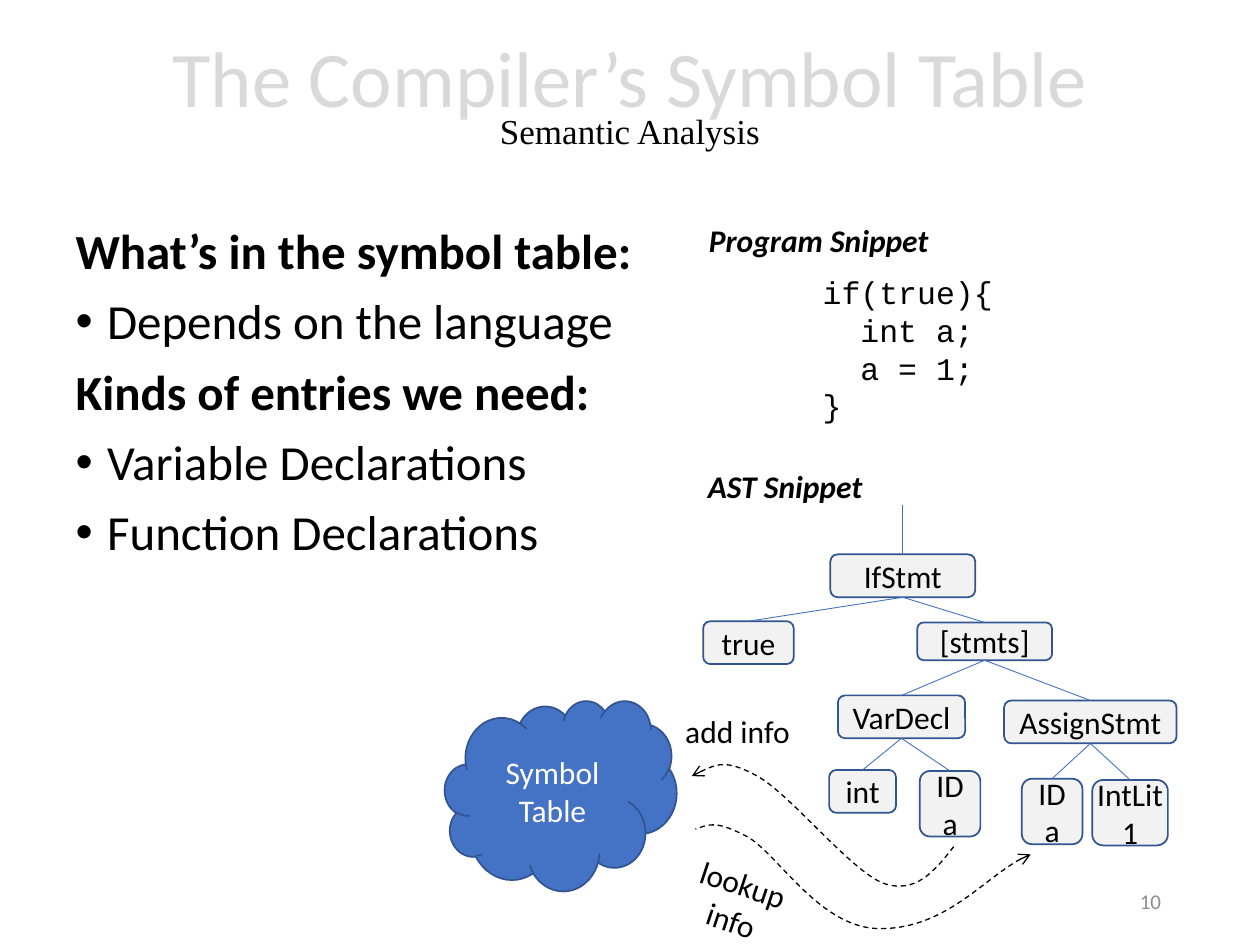
import pptx
import pptx.util
import pptx.dml.color
import pptx.enum.dml
import pptx.enum.shapes
import pptx.enum.text
import pptx.oxml.ns
from lxml import etree

Pt = pptx.util.Pt
qn = pptx.oxml.ns.qn
SHAPE = pptx.enum.shapes.MSO_SHAPE
ALIGN = pptx.enum.text.PP_ALIGN
ANCHOR = pptx.enum.text.MSO_ANCHOR


class Theme:
    sans, serif, mono = "Calibri", "Times New Roman", "Courier New"
    black, white, grey, pale = "000000", "FFFFFF", "8C8C8C", "D9D9D9"
    node, accent, border = "F2F2F2", "4472C4", "325491"
    title, body, subtitle, label, small = 45, 28, 20, 18, 12


def rgb(value):
    return pptx.dml.color.RGBColor.from_string(value)


def style_run(r, size=Theme.label, color=Theme.black, font=Theme.sans, bold=False, italic=False):
    r.font.size, r.font.name = Pt(size), font
    r.font.bold, r.font.italic = bold, italic
    r.font.color.rgb = rgb(color)


def style_text(tf, align=ALIGN.LEFT, **style):
    for p in tf.paragraphs:
        p.alignment = align
        for r in p.runs:
            style_run(r, **style)


def place(sp, x, y, w, h):
    sp.left, sp.top, sp.width, sp.height = Pt(x), Pt(y), Pt(w), Pt(h)


def add_label(s, text, box, wrap=False, align=ALIGN.LEFT, **style):
    sp = s.shapes.add_textbox(*map(Pt, box))
    sp.text_frame.text = text
    sp.text_frame.word_wrap = wrap
    style_text(sp.text_frame, align, **style)
    return sp


def add_block(s, kind, text, box, fill, color):
    sp = s.shapes.add_shape(kind, *map(Pt, box))
    sp.shadow.inherit = False
    sp.fill.solid()
    sp.fill.fore_color.rgb = rgb(fill)
    sp.line.color.rgb, sp.line.width = rgb(Theme.border), Pt(1)
    tf = sp.text_frame
    tf.text, tf.vertical_anchor = text, ANCHOR.MIDDLE
    style_text(tf, ALIGN.CENTER, color=color)
    return sp


def add_title(s, box):
    sp = s.shapes.title
    place(sp, *box)
    tf = sp.text_frame
    tf.text = "The Compiler’s Symbol Table\vSemantic Analysis"
    tf.vertical_anchor = ANCHOR.MIDDLE
    tf.auto_size = pptx.enum.text.MSO_AUTO_SIZE.NONE
    p = tf.paragraphs[0]
    p.alignment, p.line_spacing = ALIGN.CENTER, 0.7
    style_run(p.runs[0], Theme.title, Theme.pale)
    style_run(p.runs[1], Theme.subtitle, font=Theme.serif)


def add_list(s, box):
    items = [("What’s in the symbol table:", True), ("Depends on the language", False),
             ("Kinds of entries we need:", True), ("Variable Declarations", False),
             ("Function Declarations", False)]
    sp = s.placeholders[1]
    place(sp, *box)
    tf = sp.text_frame
    tf.auto_size = pptx.enum.text.MSO_AUTO_SIZE.NONE
    tf.text = "\n".join(text for text, _ in items)
    for p, (_, heading) in zip(tf.paragraphs, items):
        p.line_spacing, p.space_before = 0.9, Pt(10)
        style_run(p.runs[0], Theme.body, bold=heading)
        indent = 0 if heading else Pt(18)
        pPr = p._p.get_or_add_pPr()
        pPr.set("marL", str(indent))
        pPr.set("indent", str(-indent))
        if heading:
            etree.SubElement(pPr, qn("a:buNone"))
        else:
            etree.SubElement(pPr, qn("a:buChar")).set("char", "•")


def add_code(s, box):
    x, y, w, h = box
    add_label(s, "Program Snippet", (x, y, 142, 29), bold=True, italic=True)
    add_label(s, "if(true){\n  int a;\n  a = 1;\n}", (x + 65, y + 29.5, w - 65, h - 29.5),
              wrap=True, font=Theme.mono)


def add_edge(s, child, parent=None, start=(0, 0)):
    line = s.shapes.add_connector(pptx.enum.shapes.MSO_CONNECTOR.STRAIGHT, *map(Pt, start), 0, 0)
    if parent is not None:
        line.begin_connect(parent, 2)
    line.end_connect(child, 0)
    line.line.color.rgb, line.line.width = rgb(Theme.accent), Pt(0.5)
    etree.SubElement(line._element.spPr, qn("a:effectLst"))


def add_tree(s, box):
    x, y = box[:2]
    add_label(s, "AST Snippet", (x + 1.4, y - 24.5, 104, 29), bold=True, italic=True)
    # name: text, parent, position in the box, size
    nodes = {
        "if": ("IfStmt", None, 78.5, 28.8, 82.8, 24.5),
        "true": ("true", "if", 5.8, 67, 51.8, 24.5),
        "stmts": ("[stmts]", "if", 128.2, 67.7, 77, 21.6),
        "decl": ("VarDecl", "stmts", 82.8, 109.4, 72.7, 24.5),
        "assign": ("AssignStmt", "stmts", 177.8, 112.3, 98.6, 24.5),
        "int": ("int", "decl", 77.8, 152, 38.2, 24.5),
        "decl id": ("ID\na", "decl", 129.6, 152.6, 34.6, 37.4),
        "assign id": ("ID\na", "assign", 187.9, 157, 34.6, 37.4),
        "literal": ("IntLit\n1", "assign", 228.2, 157.7, 43.2, 37.4),
    }
    drawn = {}
    for name, (text, parent, dx, dy, w, h) in nodes.items():
        sp = add_block(s, SHAPE.ROUNDED_RECTANGLE, text, (x + dx, y + dy, w, h),
                       Theme.node, Theme.black)
        tf = sp.text_frame
        tf.margin_left = tf.margin_right = tf.margin_top = tf.margin_bottom = 0
        drawn[name] = sp
        add_edge(s, sp, drawn.get(parent), (x + dx + w / 2, y + 0.7))


def add_flow(s, points, arrow_end):
    """Dashed Bezier curve: a start point, then three points per segment."""
    start, *rest = [(Pt(px), Pt(py)) for px, py in points]
    builder = s.shapes.build_freeform(*start)
    builder.add_line_segments(rest, close=False)
    sp = builder.convert_to_shape()
    sp.shadow.inherit = False
    sp.fill.background()
    sp.line.color.rgb, sp.line.width = rgb(Theme.black), Pt(0.75)
    sp.line.dash_style = pptx.enum.dml.MSO_LINE.DASH
    etree.SubElement(sp.line._get_or_add_ln(), qn(f"a:{arrow_end}")).set("type", "arrow")
    # Turn each three line vertices into one cubic segment
    outline = next(sp._element.iter(qn("a:path")))
    steps = outline.findall(qn("a:lnTo"))
    for i in range(0, len(steps), 3):
        curve = etree.SubElement(outline, qn("a:cubicBezTo"))
        for step in steps[i:i + 3]:
            curve.append(step[0])
            outline.remove(step)


def add_symbol_table(s, box):
    x, y = box[:2]
    add_block(s, SHAPE.CLOUD, "Symbol\nTable", (x + 2.2, y + 4.3, 132.5, 108.7),
              Theme.accent, Theme.white)
    add_curve = [(293, 87.8), (282.2, 101.5), (271.4, 115.2), (252.7, 108.7), (234, 101.5),
                 (199.4, 57.6), (180.7, 47.5), (162.7, 37.4), (152.6, 42.5), (143.3, 47.5)]
    lookup_curve = [(337, 92.2), (314.6, 100.8), (288.7, 133.9), (252.7, 134.6), (217.4, 136.1),
                    (193, 92.2), (175, 82.1), (157, 72.7), (153.4, 74.9), (145.4, 77.8)]
    for curve, arrow_end in ((add_curve, "tailEnd"), (lookup_curve, "headEnd")):
        add_flow(s, [(x + dx, y + dy) for dx, dy in curve], arrow_end)
    add_label(s, "add info", (x + 132.5, y + 7.2, 75, 29))
    lookup = add_label(s, "lookup\ninfo", (x + 137.5, y + 94.3, 65, 46), align=ALIGN.CENTER)
    lookup.rotation = 18.4


def add_page_number(s, box):
    sp = add_label(s, "10", box, True, ALIGN.RIGHT, size=Theme.small, color=Theme.grey)
    sp.text_frame.vertical_anchor = ANCHOR.MIDDLE


def main():
    prs = pptx.Presentation()
    prs.slide_width, prs.slide_height = Pt(720), Pt(540)
    s = prs.slides.add_slide(prs.slide_layouts[1])
    add_title(s, (49.5, 6.5, 621, 104.5))
    add_list(s, (36, 126, 357, 356.5))
    add_code(s, (398, 123, 234, 124))
    add_tree(s, (396, 288, 280, 196))
    add_symbol_table(s, (252, 396, 340, 140))
    add_page_number(s, (508.5, 500.5, 162, 28.8))
    prs.save("out.pptx")


if __name__ == "__main__":
    main()
